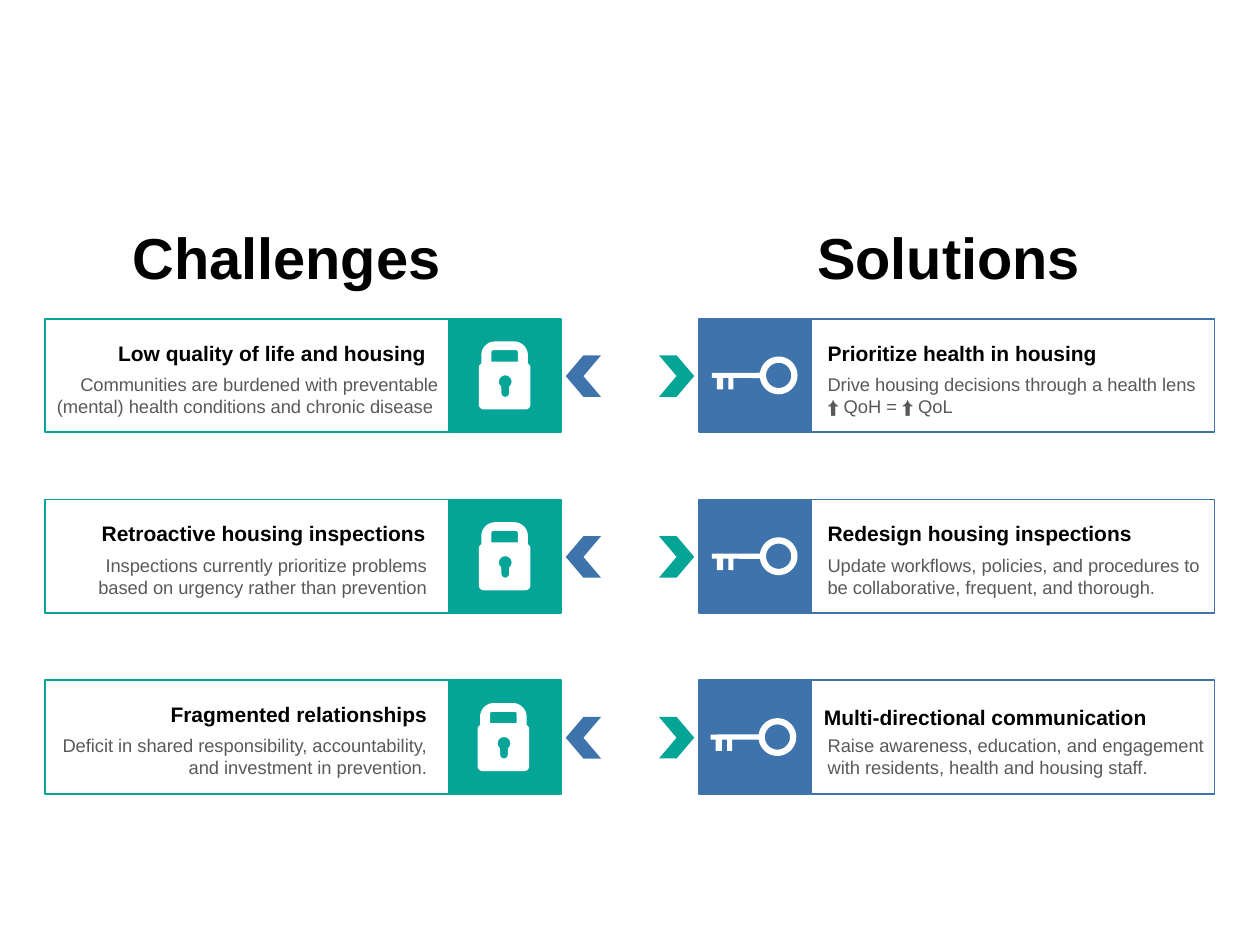
"""Build a slide that pairs three housing challenges with three solutions."""
import math

import pptx
import pptx.dml.color
import pptx.enum.shapes
import pptx.enum.text
import pptx.util

SHAPES = pptx.enum.shapes.MSO_SHAPE
ALIGN = pptx.enum.text.PP_ALIGN
inch = pptx.util.Inches
color = pptx.dml.color.RGBColor.from_string
TEAL, BLUE, WHITE, BLACK, GRAY = "04A597", "3E74AB", "FFFFFF", "000000", "595959"


def arc(x, y, radius, start, end):
    """Return points along a circular arc, in degrees clockwise from the right."""
    steps = max(6, abs(end - start) // 10)
    angles = [math.radians(start + (end - start) * step / steps) for step in range(steps + 1)]
    return [(x + radius * math.cos(angle), y + radius * math.sin(angle)) for angle in angles]


def add_text(page, frame, text, size, hue, align, bold, wrap):
    """Add a one-paragraph text box that grows with its text."""
    box = page.shapes.add_textbox(*map(inch, frame))
    box.text_frame.word_wrap = wrap
    box.text_frame.auto_size = pptx.enum.text.MSO_AUTO_SIZE.SHAPE_TO_FIT_TEXT
    para = box.text_frame.paragraphs[0]
    para.text = text
    para.alignment = align
    para.font.name = "Arial"
    para.font.size = pptx.util.Pt(size)
    para.font.bold = bold
    para.font.color.rgb = color(hue)


key = [
    arc(6.18, 0.45, 0.15, -172, 172)
    + [(5.82, 0.47), (5.82, 0.56), (5.78, 0.56), (5.78, 0.47), (5.74, 0.47),
       (5.74, 0.56), (5.69, 0.56), (5.69, 0.47), (5.65, 0.47), (5.65, 0.43)],
    arc(6.18, 0.45, 0.1, 360, 0),
]
lock = [
    arc(3.93, 0.29, 0.11, 180, 270) + arc(4.08, 0.29, 0.11, -90, 0)
    + arc(4.17, 0.39, 0.04, -60, 0) + arc(4.17, 0.68, 0.04, 0, 90)
    + arc(3.84, 0.68, 0.04, 90, 180) + arc(3.84, 0.39, 0.04, 180, 240),
    [(3.9, 0.34), (4.11, 0.34), (4.11, 0.26), (4.1, 0.25), (3.91, 0.25), (3.9, 0.26)],
    arc(4.01, 0.5, 0.05, 50, -230) + arc(4.01, 0.59, 0.03, 180, 0),
]

solutions = [
    ("Prioritize health in housing", (6.47, 0.12, 2.42),
     "Drive housing decisions through a health lens ⬆️ QoH = ⬆️ QoL", (6.47, 0.38, 3.2)),
    ("Redesign housing inspections", (6.47, 0.12, 2.65),
     "Update workflows, policies, and procedures to be collaborative, frequent, and thorough.",
     (6.47, 0.38, 3.2)),
    ("Multi-directional communication", (6.44, 0.14, 2.8),
     "Raise awareness, education, and engagement with residents, health and housing staff.",
     (6.47, 0.38, 3.41)),
]
challenges = [
    ("Low quality of life and housing", (0.8, 0.12, 2.68),
     "Communities are burdened with preventable (mental) health conditions and chronic disease ",
     (0.03, 0.38, 3.55)),
    ("Retroactive housing inspections", (0.68, 0.12, 2.8),
     "Inspections currently prioritize problems based on urgency rather than prevention",
     (0.35, 0.38, 3.14)),
    ("Fragmented relationships", (1.23, 0.12, 2.26),
     "Deficit in shared responsibility, accountability, and investment in prevention.",
     (0.35, 0.38, 3.14)),
]
sides = [
    ("Solutions", (6.3, 1.71, 2.46, 0.7), solutions, key, BLUE, TEAL, 5.23, 5.55, 6.44, 0, ALIGN.LEFT),
    ("Challenges", (0.85, 1.71, 2.85, 0.7), challenges, lock, TEAL, BLUE, 4.49, 3.56, 0.36, 180, ALIGN.RIGHT),
]
first_row, row_pitch, row_height = 2.53, 1.435, 0.9

deck = pptx.Presentation()
deck.slide_width, deck.slide_height = inch(10), inch(7.5)
page = deck.slides.add_slide(deck.slide_layouts[6])

for title, title_frame, rows, icon, hue, arrow_hue, arrow_x, tile_x, card_x, turn, align in sides:
    add_text(page, title_frame, title, 33, BLACK, ALIGN.CENTER, True, False)
    for row, (heading, heading_spot, detail, detail_spot) in enumerate(rows):
        top = first_row + row * row_pitch

        chevron = page.shapes.add_shape(
            SHAPES.CHEVRON, inch(arrow_x), inch(top + 0.29), inch(0.28), inch(0.33))
        chevron.rotation = turn
        chevron.shadow.inherit = False
        chevron.fill.solid()
        chevron.fill.fore_color.rgb = color(arrow_hue)
        chevron.line.fill.background()

        for left, width, filled in [(tile_x, 0.89, True), (card_x, 3.2, False)]:
            panel = page.shapes.add_shape(
                SHAPES.RECTANGLE, inch(left), inch(top), inch(width), inch(row_height))
            panel.shadow.inherit = False
            panel.line.color.rgb = color(hue)
            panel.line.width = pptx.util.Pt(1)
            if filled:
                panel.fill.solid()
                panel.fill.fore_color.rgb = color(hue)
            else:
                panel.fill.background()

        nudge = -0.01 if row == 2 else 0
        contours = [[(inch(x + nudge), inch(top + y)) for x, y in contour] for contour in icon]
        builder = page.shapes.build_freeform(*contours[0][0])
        builder.add_line_segments(contours[0][1:], close=True)
        for contour in contours[1:]:
            builder.move_to(*contour[0])
            builder.add_line_segments(contour[1:], close=True)
        symbol = builder.convert_to_shape()
        symbol.shadow.inherit = False
        symbol.fill.solid()
        symbol.fill.fore_color.rgb = color(WHITE)
        symbol.line.fill.background()

        for text, spot, height, size, ink, bold in [
            (heading, heading_spot, 0.3, 12, BLACK, True),
            (detail, detail_spot, 0.45, 10.5, GRAY, False),
        ]:
            left, drop, width = spot
            add_text(page, (left, top + drop, width, height), text, size, ink, align, bold, not bold)

deck.save("out.pptx")
